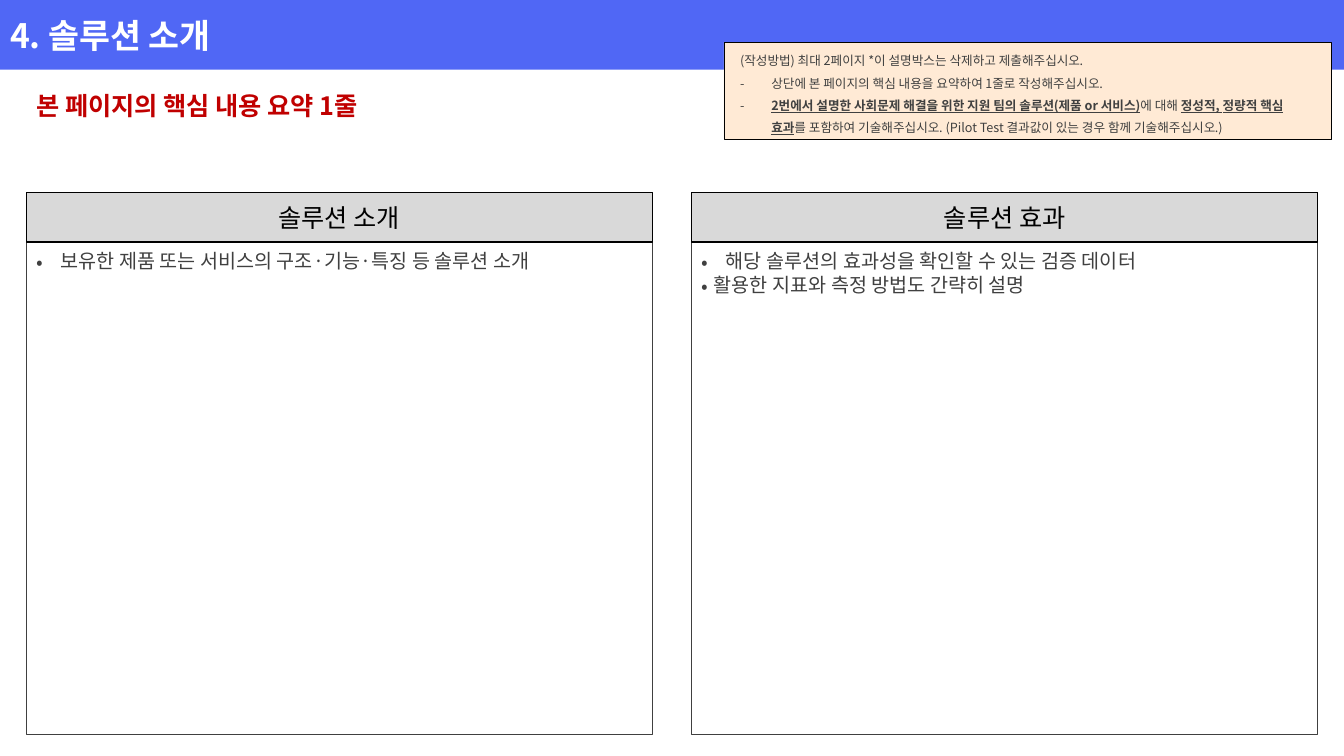
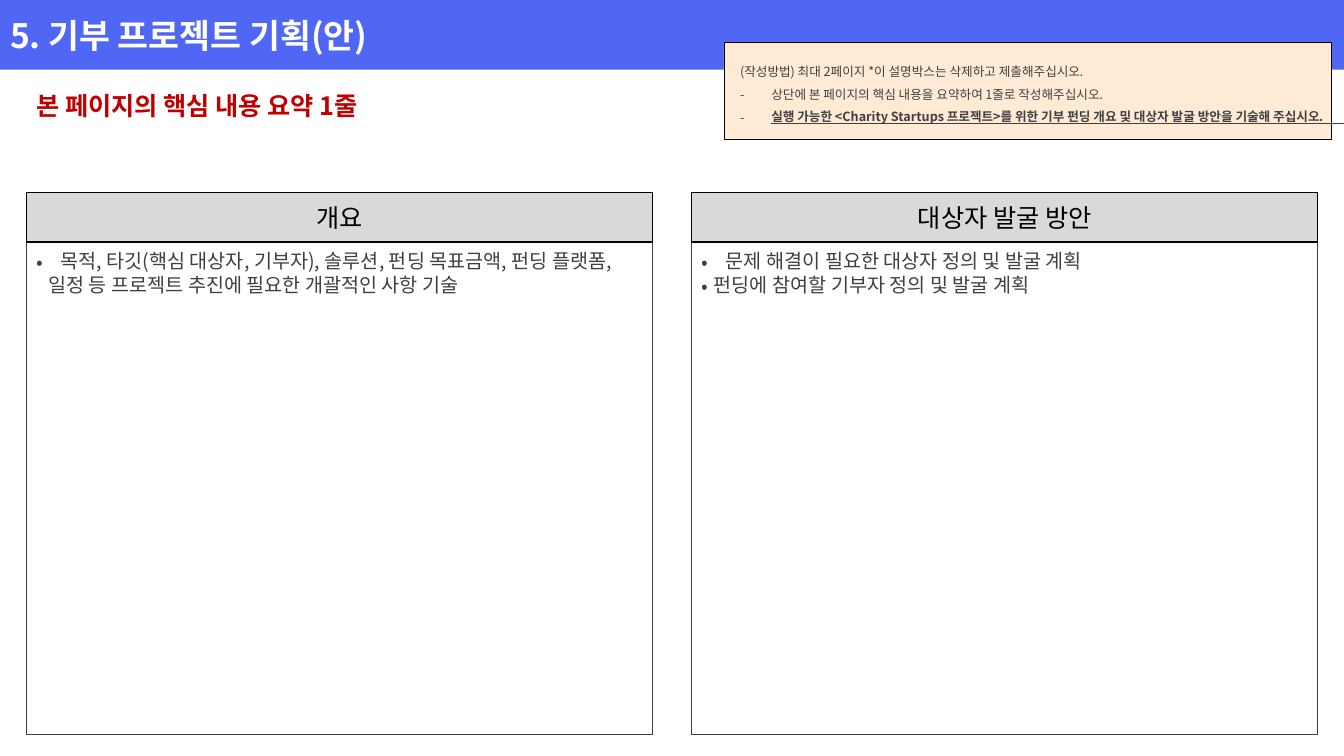
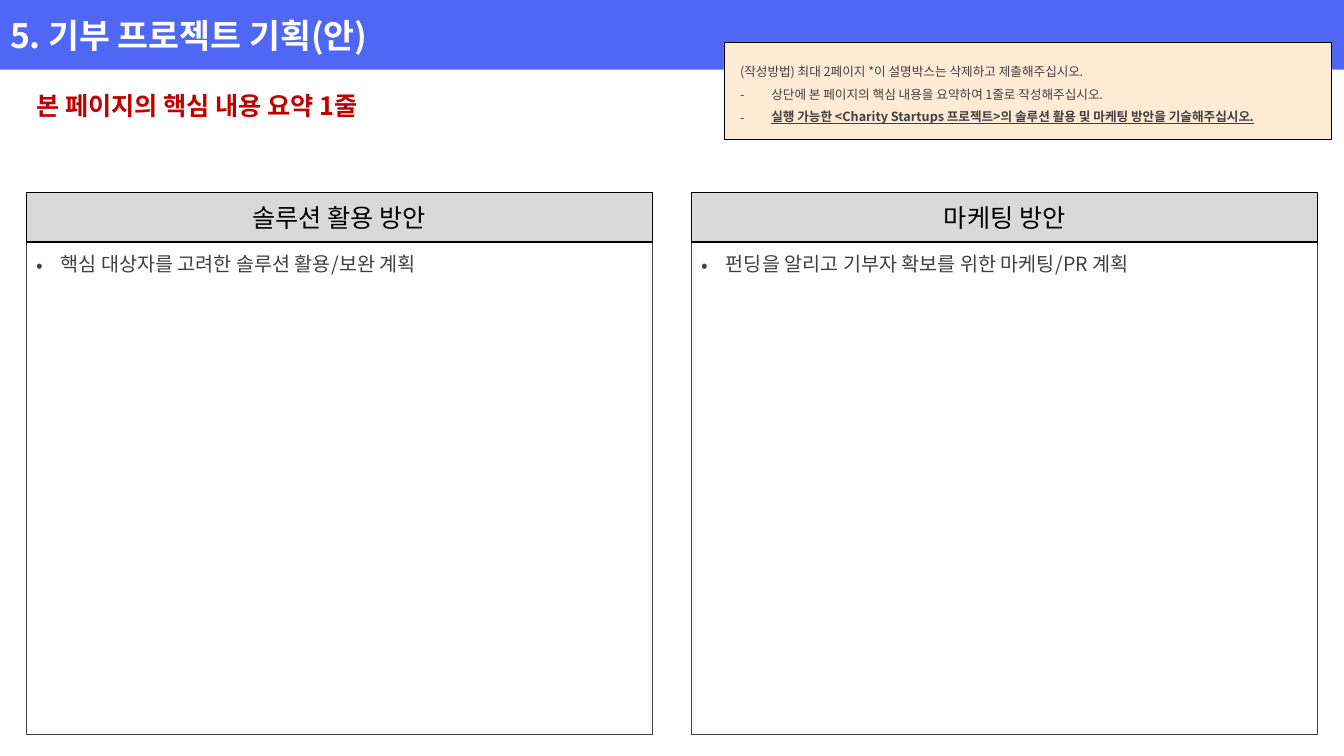
"""Build three solution and project planning template slides."""
from dataclasses import dataclass

import lxml.etree
import pptx
import pptx.dml.color
import pptx.enum.shapes
import pptx.enum.text
import pptx.oxml.ns
import pptx.util

PX = 9144
FONT = "Noto Sans CJK KR"
BLUE, PEACH, GREY = "5067F5", "FFEAD5", "D9D9D9"
RED, DARK, BLACK, WHITE = "C00000", "404040", "000000", "FFFFFF"
LEFTS = (26, 686)
WIDE = 621
TOP = 191
SUMMARY = "본 페이지의 핵심 내용 요약 1줄"
RULES = (
    "(작성방법) 최대 2페이지 *이 설명박스는 삭제하고 제출해주십시오.",
    "상단에 본 페이지의 핵심 내용을 요약하여 1줄로 작성해주십시오.",
)
MID = pptx.enum.text.MSO_ANCHOR.MIDDLE
ALIGN = pptx.enum.text.PP_ALIGN


@dataclass(frozen=True)
class Item:
    text: str
    hang: int = 24
    mark: str = "•"


@dataclass(frozen=True)
class Panel:
    head: str
    items: tuple[Item, ...]


@dataclass(frozen=True)
class Page:
    title: str
    task: tuple[tuple[str, bool], ...]
    panels: tuple[Panel, Panel]
    top: int = 242


PAGES = (
    Page(
        "4. 솔루션 소개",
        (
            ("2번에서 설명한 사회문제 해결을 위한 지원 팀의 솔루션(제품 or 서비스)", True),
            ("에 대해 ", False),
            ("정성적, 정량적 핵심 효과", True),
            ("를 포함하여 기술해주십시오. (Pilot Test 결과값이 있는 경우 함께 기술해주십시오.)", False),
        ),
        (
            Panel("솔루션 소개", (Item("보유한 제품 또는 서비스의 구조·기능·특징 등 솔루션 소개"),)),
            Panel("솔루션 효과", (
                Item("해당 솔루션의 효과성을 확인할 수 있는 검증 데이터"),
                Item("활용한 지표와 측정 방법도 간략히 설명", 12),
            )),
        ),
    ),
    Page(
        "5. 기부 프로젝트 기획(안)",
        (("실행 가능한 <Charity Startups 프로젝트>를 위한 기부 펀딩 개요 및 대상자 발굴 방안을 기술해 주십시오.", True),),
        (
            Panel("개요", (
                Item("목적, 타깃(핵심 대상자, 기부자), 솔루션, 펀딩 목표금액, 펀딩 플랫폼,"),
                Item("일정 등 프로젝트 추진에 필요한 개괄적인 사항 기술", 12, ""),
            )),
            Panel("대상자 발굴 방안", (
                Item("문제 해결이 필요한 대상자 정의 및 발굴 계획"),
                Item("펀딩에 참여할 기부자 정의 및 발굴 계획", 12),
            )),
        ),
    ),
    Page(
        "5. 기부 프로젝트 기획(안)",
        (("실행 가능한 <Charity Startups 프로젝트>의 솔루션 활용 및 마케팅 방안을 기술해주십시오.", True),),
        (
            Panel("솔루션 활용 방안", (Item("핵심 대상자를 고려한 솔루션 활용/보완 계획"),)),
            Panel("마케팅 방안", (Item("펀딩을 알리고 기부자 확보를 위한 마케팅/PR 계획"),)),
        ),
        245,
    ),
)


def px(size: int) -> pptx.util.Emu:
    return pptx.util.Emu(size * PX)


def rgb(code: str) -> pptx.dml.color.RGBColor:
    return pptx.dml.color.RGBColor.from_string(code)


def place(shape, left: int, top: int, width: int, height: int) -> None:
    shape.left, shape.top = px(left), px(top)
    shape.width, shape.height = px(width), px(height)


def inset(frame, left: int = 10) -> None:
    frame.word_wrap = True
    frame.margin_left, frame.margin_right = px(left), px(10)
    frame.margin_top = frame.margin_bottom = px(5)


def style(para, size: int, color: str, bold: bool = False,
          align=ALIGN.LEFT, pitch: int = 0) -> None:
    para.alignment = align
    para.space_before = para.space_after = pptx.util.Pt(0)
    if pitch:
        para.line_spacing = pptx.util.Pt(pitch)
    for run in para.runs:
        font = run.font
        font.size, font.bold, font.name = pptx.util.Pt(size), bold, FONT
        font.color.rgb = rgb(color)
        east = lxml.etree.SubElement(font._element, pptx.oxml.ns.qn("a:ea"))
        east.set("typeface", FONT)


def bullet(para, mark: str, hang: int) -> None:
    props = para._p.get_or_add_pPr()
    props.set("marL", str(hang * PX))
    props.set("indent", str(-hang * PX if mark else 0))
    if mark:
        face = lxml.etree.SubElement(props, pptx.oxml.ns.qn("a:buFont"))
        face.set("typeface", FONT)
        char = lxml.etree.SubElement(props, pptx.oxml.ns.qn("a:buChar"))
        char.set("char", mark)
    else:
        lxml.etree.SubElement(props, pptx.oxml.ns.qn("a:buNone"))


def box(slide, left: int, top: int, width: int, height: int,
        line: str, fill: str = "", weight: float = 1):
    kind = pptx.enum.shapes.MSO_SHAPE.RECTANGLE
    shape = slide.shapes.add_shape(kind, px(left), px(top), px(width), px(height))
    shape.shadow.inherit = False
    shape.line.color.rgb = rgb(line)
    shape.line.width = pptx.util.Pt(weight)
    if fill:
        shape.fill.solid()
        shape.fill.fore_color.rgb = rgb(fill)
    else:
        shape.fill.background()
    shape.text_frame.vertical_anchor = MID
    inset(shape.text_frame)
    return shape


def banner(slide, text: str) -> None:
    title = slide.shapes.title
    place(title, 0, 0, 1333, 69)
    title.fill.solid()
    title.fill.fore_color.rgb = rgb(BLUE)
    frame = title.text_frame
    frame.text = text
    frame.vertical_anchor = MID
    inset(frame)
    style(frame.paragraphs[0], 24, WHITE, True)


def guide(slide, task: tuple[tuple[str, bool], ...]) -> None:
    frame = box(slide, 718, 42, 602, 96, BLACK, PEACH, 0.25).text_frame
    inset(frame, 16)
    frame.text = "\n".join(RULES)
    last = frame.add_paragraph()
    for text, _ in task:
        last.add_run().text = text
    for para in frame.paragraphs[1:]:
        bullet(para, "-", 31)
    for para in frame.paragraphs:
        style(para, 9, DARK, pitch=16)
    for run, (_, strong) in zip(last.runs, task):
        run.font.bold = run.font.underline = strong


def summary(slide) -> None:
    frame = slide.shapes.add_textbox(px(26), px(69), px(1281), px(53)).text_frame
    frame.text = SUMMARY
    frame.vertical_anchor = MID
    inset(frame)
    style(frame.paragraphs[0], 18, RED, True, pitch=34)


def column(slide, body, panel: Panel, left: int, top: int) -> None:
    box(slide, left, TOP, WIDE, 538, DARK)
    head = box(slide, left, TOP, WIDE, 49, BLACK, GREY).text_frame
    head.text = panel.head
    style(head.paragraphs[0], 18, BLACK, align=ALIGN.CENTER)
    place(body, left, top, WIDE, 10 + 24 * len(panel.items))
    frame = body.text_frame
    frame.text = "\n".join(item.text for item in panel.items)
    frame.auto_size = pptx.enum.text.MSO_AUTO_SIZE.SHAPE_TO_FIT_TEXT
    inset(frame)
    for para, item in zip(frame.paragraphs, panel.items):
        bullet(para, item.mark, item.hang)
        style(para, 14, DARK, align=ALIGN.JUSTIFY, pitch=17)


def main() -> None:
    deck = pptx.Presentation()
    deck.slide_width, deck.slide_height = px(1333), px(750)
    for page in PAGES:
        slide = deck.slides.add_slide(deck.slide_layouts[3])
        banner(slide, page.title)
        guide(slide, page.task)
        summary(slide)
        bodies = list(slide.placeholders)[1:]
        for body, panel, left in zip(bodies, page.panels, LEFTS):
            column(slide, body, panel, left, page.top)
    deck.save("out.pptx")


if __name__ == "__main__":
    main()
